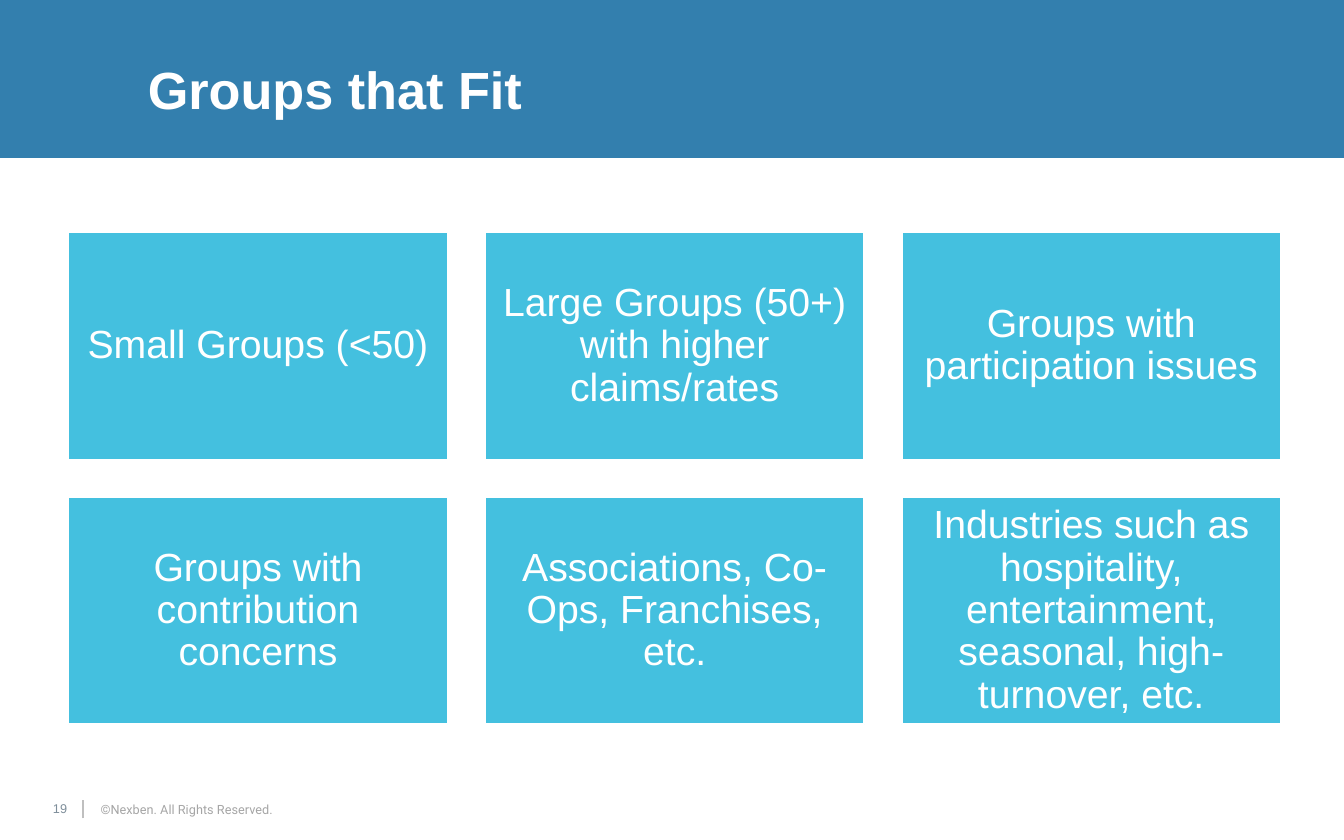
from dataclasses import dataclass

from lxml import etree
from pptx import Presentation
from pptx import util as u
from pptx.dml.color import RGBColor
from pptx.enum import shapes, text
from pptx.oxml.ns import qn

COLORS = {
    "white": "FFFFFF",
    "band": "337FAE",
    "card": "44C0DF",
    "rule": "BFBFBF",
    "number": "7E8E9A",
    "copyright": "A6A6A6",
}
GROUPS = [
    "Small Groups (<50)",
    "Large Groups (50+) with higher claims/rates",
    "Groups with participation issues",
    "Groups with contribution concerns",
    "Associations, Co-Ops, Franchises, etc.",
    "Industries such as hospitality, entertainment, seasonal, high-turnover, etc.",
]
COLUMNS = 3
CARD_LEFT, CARD_TOP = 0.51, 1.73
CARD_WIDTH, CARD_HEIGHT = 2.82, 1.69
GAP = 0.28


def color(name):
    return RGBColor.from_string(COLORS[name])


@dataclass
class SlideBuilder:
    page: object
    font: str = "Arial"

    def set_text(self, shape, words, size, tint, align, margins, font=None, bold=False):
        frame = shape.text_frame
        frame.word_wrap = True
        frame.auto_size = text.MSO_AUTO_SIZE.NONE
        (frame.margin_left, frame.margin_top,
         frame.margin_right, frame.margin_bottom) = map(u.Inches, margins)
        frame.text = words
        para = frame.paragraphs[0]
        para.alignment = align
        para.font.name = font or self.font
        para.font.size = u.Pt(size)
        para.font.bold = bold
        para.font.color.rgb = color(tint)
        return para

    def rectangle(self, left, top, width, height, fill, line):
        box = self.page.shapes.add_shape(
            shapes.MSO_SHAPE.RECTANGLE, *map(u.Inches, (left, top, width, height)))
        box.shadow.inherit = False
        box.fill.solid()
        box.fill.fore_color.rgb = color(fill)
        box.line.color.rgb = color(line)
        box.line.width = u.Pt(1)
        return box

    def title(self, words):
        title = self.page.shapes.title
        title.left, title.top, title.width, title.height = map(
            u.Inches, (0.51, 0.26, 7.22, 0.86))
        para = self.set_text(title, words, 28, "white", text.PP_ALIGN.LEFT,
                             (0.59, 0.05, 0.1, 0.05), bold=True)
        para.line_spacing = 0.9
        title.text_frame.vertical_anchor = text.MSO_ANCHOR.MIDDLE
        band = self.rectangle(0, 0, 10, 1.17, "band", "band")
        title.element.addprevious(band.element)

    def card(self, left, top, words):
        box = self.rectangle(left, top, CARD_WIDTH, CARD_HEIGHT, "card", "white")
        para = self.set_text(box, words, 21, "white", text.PP_ALIGN.CENTER, (0.09,) * 4)
        para.line_spacing = 0.9
        box.text_frame.vertical_anchor = text.MSO_ANCHOR.MIDDLE

    def label(self, left, top, width, height, words, tint, align, margins, font=None):
        box = self.page.shapes.add_textbox(*map(u.Inches, (left, top, width, height)))
        self.set_text(box, words, 6.8, tint, align, margins, font)

    def rule(self, x, top, bottom):
        line = self.page.shapes.add_connector(
            shapes.MSO_CONNECTOR.STRAIGHT, *map(u.Inches, (x, bottom, x, top)))
        line.line.color.rgb = color("rule")
        line.line.width = u.Pt(1)
        etree.SubElement(line.element.spPr, qn("a:effectLst"))


def main():
    deck = Presentation()
    deck.slide_width, deck.slide_height = u.Inches(10), u.Inches(6.25)
    builder = SlideBuilder(deck.slides.add_slide(deck.slide_layouts[5]))

    builder.title("Groups that Fit")
    for index, words in enumerate(GROUPS):
        row, column = divmod(index, COLUMNS)
        builder.card(CARD_LEFT + column * (CARD_WIDTH + GAP),
                     CARD_TOP + row * (CARD_HEIGHT + GAP), words)

    builder.rule(0.62, 5.95, 6.09)
    builder.label(0.3, 5.96, 0.2, 0.12, "19", "number",
                  text.PP_ALIGN.RIGHT, (0, 0, 0, 0))
    builder.label(0.65, 5.92, 2.54, 0.13, "©Nexben. All Rights Reserved.", "copyright",
                  text.PP_ALIGN.LEFT, (0.1, 0.05, 0.1, 0.05), "Roboto")
    deck.save("out.pptx")


if __name__ == "__main__":
    main()
